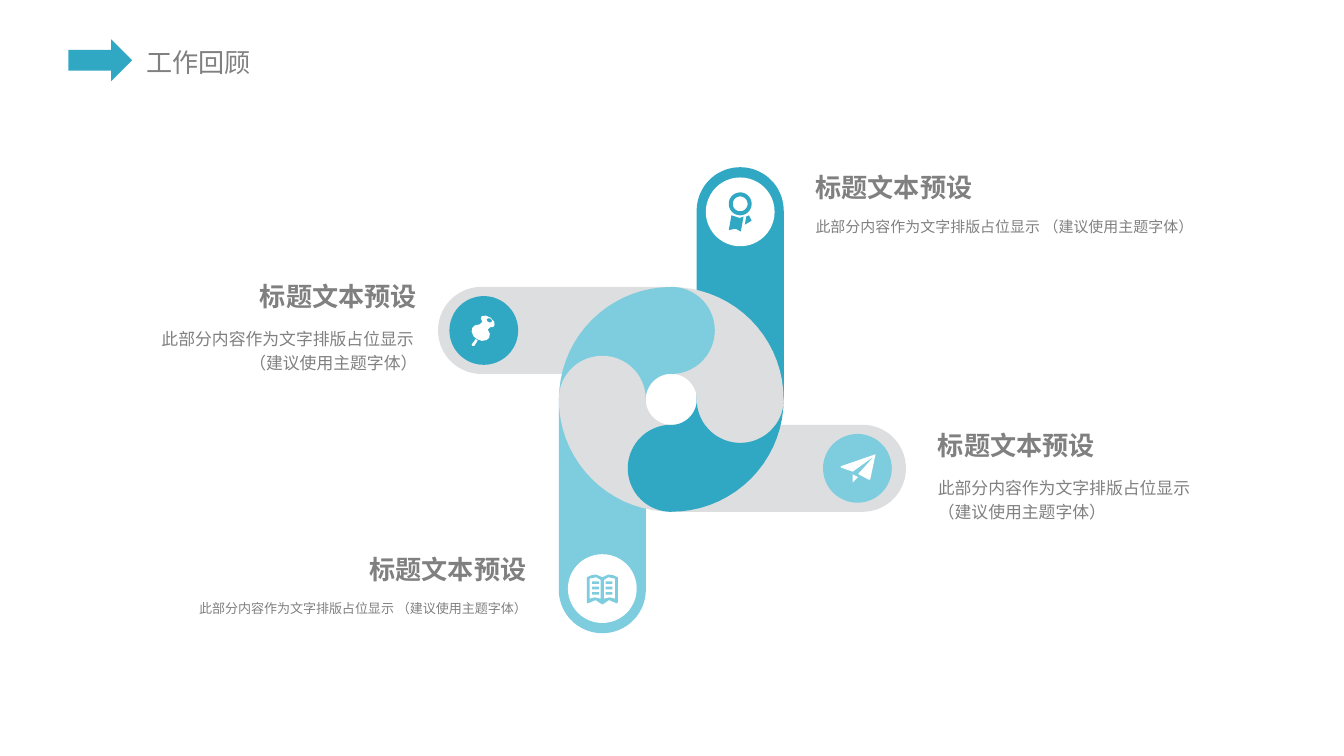
from dataclasses import dataclass
from math import cos, radians, sin

from lxml.etree import SubElement
from pptx import Presentation
from pptx.dml.color import RGBColor
from pptx.enum.shapes import MSO_SHAPE
from pptx.enum.text import MSO_ANCHOR, PP_ALIGN
from pptx.oxml.ns import qn
from pptx.util import Inches, Pt

Point = tuple[float, float]
Contour = list[Point]

COLUMNS, ROWS = 100, 56.25
FONT = "Noto Sans CJK SC"
TEAL, AQUA, SILVER, GREY, WHITE = "30A8C4", "7ECDDF", "DCDEE0", "808080", "FFFFFF"
HUB = (49.95, 29.72)
RIM, HOLE, ORBIT, CAP = 8.36, 1.9, 5.13, 3.24
BADGE_RADIUS = 2.56


@dataclass
class Arm:
    turn: int
    length: float
    color: str
    badge_color: str
    icon_color: str
    reach: float
    icon: list[Contour]


@dataclass
class Blade:
    turn: int
    color: str
    notched: bool = False


@dataclass
class Caption:
    left: float
    top: float
    width: float
    body_height: float
    body_size: int
    align: PP_ALIGN
    margin_left: float
    margin_right: float
    lines: tuple[str, ...]


def grid(cells: float) -> int:
    return Inches(cells * 0.1)


def color_of(code: str) -> RGBColor:
    return RGBColor.from_string(code)


def assign(target, values: dict) -> None:
    for name, value in values.items():
        setattr(target, name, value)


def arc(center: Point, radius: float, start: int, end: int) -> Contour:
    steps = abs(end - start) // 5
    angles = [radians(start + (end - start) * step / steps) for step in range(steps + 1)]
    return [(center[0] + radius * cos(angle), center[1] + radius * sin(angle)) for angle in angles]


def turned(points: Contour, degrees: int) -> Contour:
    c, s = cos(radians(degrees)), sin(radians(degrees))
    return [(x * c - y * s, x * s + y * c) for x, y in points]


def mirrored(points: Contour) -> Contour:
    return [(-x, y) for x, y in points]


def paint(shape, color: str) -> None:
    shape.shadow.inherit = False
    shape.fill.solid()
    shape.fill.fore_color.rgb = color_of(color)
    shape.line.fill.background()


def draw_outline(page, center: Point, contours: list[Contour], color: str) -> None:
    placed = [[(grid(center[0] + x), grid(center[1] + y)) for x, y in points] for points in contours]
    builder = page.shapes.build_freeform(*placed[0][0], scale=1.0)
    for index, points in enumerate(placed):
        if index:
            builder.move_to(*points[0])
        builder.add_line_segments(points[1:], close=True)
    paint(builder.convert_to_shape(), color)


def draw_preset(page, kind, left: float, top: float, width: float, height: float, color: str) -> None:
    paint(page.shapes.add_shape(kind, grid(left), grid(top), grid(width), grid(height)), color)


def draw_arm(page, arm: Arm) -> None:
    cap = arc((-arm.length, -ORBIT), CAP, 90, 270)
    outline = cap + [(0, -ORBIT - CAP), (0, -ORBIT + CAP)]
    draw_outline(page, HUB, [turned(outline, arm.turn)], arm.color)


def draw_blade(page, blade: Blade) -> None:
    outline = arc((0, 0), RIM, 180, 270) + arc((0, -ORBIT), CAP, -90, 90) + arc((0, 0), HOLE, 270, 180)
    if blade.notched:
        outline += arc((-ORBIT, 0), CAP, 360, 180)
    draw_outline(page, HUB, [turned(outline, blade.turn)], blade.color)


def draw_badge(page, arm: Arm) -> None:
    x, y = turned([(-arm.reach, -ORBIT)], arm.turn)[0]
    center = (HUB[0] + x, HUB[1] + y)
    size = 2 * BADGE_RADIUS
    draw_preset(page, MSO_SHAPE.OVAL, center[0] - BADGE_RADIUS, center[1] - BADGE_RADIUS,
                size, size, arm.badge_color)
    draw_outline(page, center, arm.icon, arm.icon_color)


def write(box, lines: tuple[str, ...], size: int, bold: bool, align, spacing: float, frame: dict) -> None:
    assign(box.text_frame, frame)
    para = box.text_frame.paragraphs[0]
    assign(para, {"alignment": align, "line_spacing": spacing})
    for index, line in enumerate(lines):
        if index:
            para.add_line_break()
        span = para.add_run()
        span.text = line
        assign(span.font, {"size": Pt(size), "bold": bold, "name": FONT})
        span.font.color.rgb = color_of(GREY)
        SubElement(span.font._element, qn("a:ea")).set("typeface", FONT)


def draw_caption(page, caption: Caption) -> None:
    parts = [
        (caption.top, 3, ("标题文本预设",), 14, True, 1.0),
        (caption.top + 3, caption.body_height, caption.lines, caption.body_size, False, 1.2),
    ]
    for top, height, lines, size, bold, spacing in parts:
        box = page.shapes.add_textbox(grid(caption.left), grid(top), grid(caption.width), grid(height))
        write(box, lines, size, bold, caption.align, spacing, {
            "margin_left": grid(caption.margin_left), "margin_right": grid(caption.margin_right),
            "margin_top": 0, "margin_bottom": 0,
            "vertical_anchor": MSO_ANCHOR.MIDDLE, "word_wrap": not bold,
        })


PIN = [
    [(.4, .55), (.45, .25), (.3, -.05), (.5, -.25), (.7, -.25), (.8, -.4), (.78, -.65), (.5, -.95),
     (.15, -1.1), (-.15, -1.05), (-.22, -.9), (-.1, -.65), (-.3, -.45), (-.65, -.38), (-.85, -.2),
     (-.9, .1), (-.75, .45), (-.5, .65), (-.15, .78), (.2, .72)],
    [(.3, -.65), (.2, -.8), (.3, -.9), (.5, -.88), (.62, -.75), (.58, -.62), (.45, -.58)],
    [(-.6, .65), (-.9, 1.05), (-.85, 1.15), (-.7, 1.15), (-.45, .75)],
]
AWARD = [
    arc((0, -.6), .85, 0, 360),
    arc((0, -.6), .55, 0, 360),
    [(-.65, .25), (-.85, 1.35), (-.35, 1.25), (.05, 1.45), (.25, .35), (-.05, .45)],
    [(.65, .25), (.45, .35), (.35, .95), (.85, .65)],
]
PLANE = [
    [(1.35, -1.05), (-1.25, -.15), (-1.22, -.05), (-.35, .25), (1.25, -.9), (.05, .42), (.85, .85), (.95, .85)],
    [(-.35, .45), (-.35, 1.05), (.05, .65)],
]
COVER = [(0, -.85), (.45, -1.05), (.8, -1), (1.15, -.85), (1.15, 1), (1.1, 1.1), (.5, .85), (.05, 1.15)]
LEAF = [(.12, .75), (.55, .65), (.95, .75), (.95, -.75), (.45, -.85), (.12, -.65)]
TEXT_LINES = [[(.25, y), (.75, y), (.75, y + .2), (.25, y + .2)] for y in (-.55, -.15, .25)]
HALF_BOOK = [LEAF, *TEXT_LINES]
BOOK = [COVER + mirrored(COVER[::-1]), *HALF_BOOK, *map(mirrored, HALF_BOOK)]

ARMS = [
    Arm(270, 14.16, AQUA, WHITE, AQUA, 14.08, BOOK),
    Arm(180, 14.22, SILVER, AQUA, WHITE, 13.85, PLANE),
    Arm(90, 14.04, TEAL, WHITE, TEAL, 13.95, AWARD),
    Arm(0, 14.12, SILVER, TEAL, WHITE, 13.95, PIN),
]
BLADES = [Blade(90, SILVER), Blade(0, AQUA), Blade(270, SILVER), Blade(180, TEAL, True)]

TWO_LINES = ("此部分内容作为文字排版占位显示 ", "（建议使用主题字体）")
ONE_LINE = ("".join(TWO_LINES),)
CAPTIONS = [
    Caption(67.38, 31.62, 27, 4.8, 9, PP_ALIGN.LEFT, 2.4, 0, TWO_LINES),
    Caption(7.15, 20.54, 26.3, 4.8, 9, PP_ALIGN.RIGHT, 0, 2.4, TWO_LINES),
    Caption(58.28, 12.4, 33.6, 2.6, 8, PP_ALIGN.LEFT, 2.4, 0, ONE_LINE),
    Caption(8, 40.84, 33.6, 2.6, 7, PP_ALIGN.RIGHT, 2.4, 2.4, ONE_LINE),
]


def main() -> None:
    deck = Presentation()
    assign(deck, {"slide_width": grid(COLUMNS), "slide_height": grid(ROWS)})
    page = deck.slides.add_slide(deck.slide_layouts[5])
    title = page.shapes.title
    assign(title, {"left": grid(9.8), "top": grid(2.95), "width": grid(10.3), "height": grid(3.4)})
    write(title, ("工作回顾",), 14, False, PP_ALIGN.LEFT, 1.0, {
        "margin_left": grid(1.1), "margin_right": grid(1.1), "margin_top": grid(0.5),
        "margin_bottom": grid(0.5), "vertical_anchor": MSO_ANCHOR.TOP, "word_wrap": False,
    })
    draw_preset(page, MSO_SHAPE.RIGHT_ARROW, 5.1, 2.93, 4.74, 3.12, TEAL)
    for arm in ARMS:
        draw_arm(page, arm)
    for blade in BLADES:
        draw_blade(page, blade)
    for arm in ARMS:
        draw_badge(page, arm)
    for caption in CAPTIONS:
        draw_caption(page, caption)
    deck.save("out.pptx")


if __name__ == "__main__":
    main()
